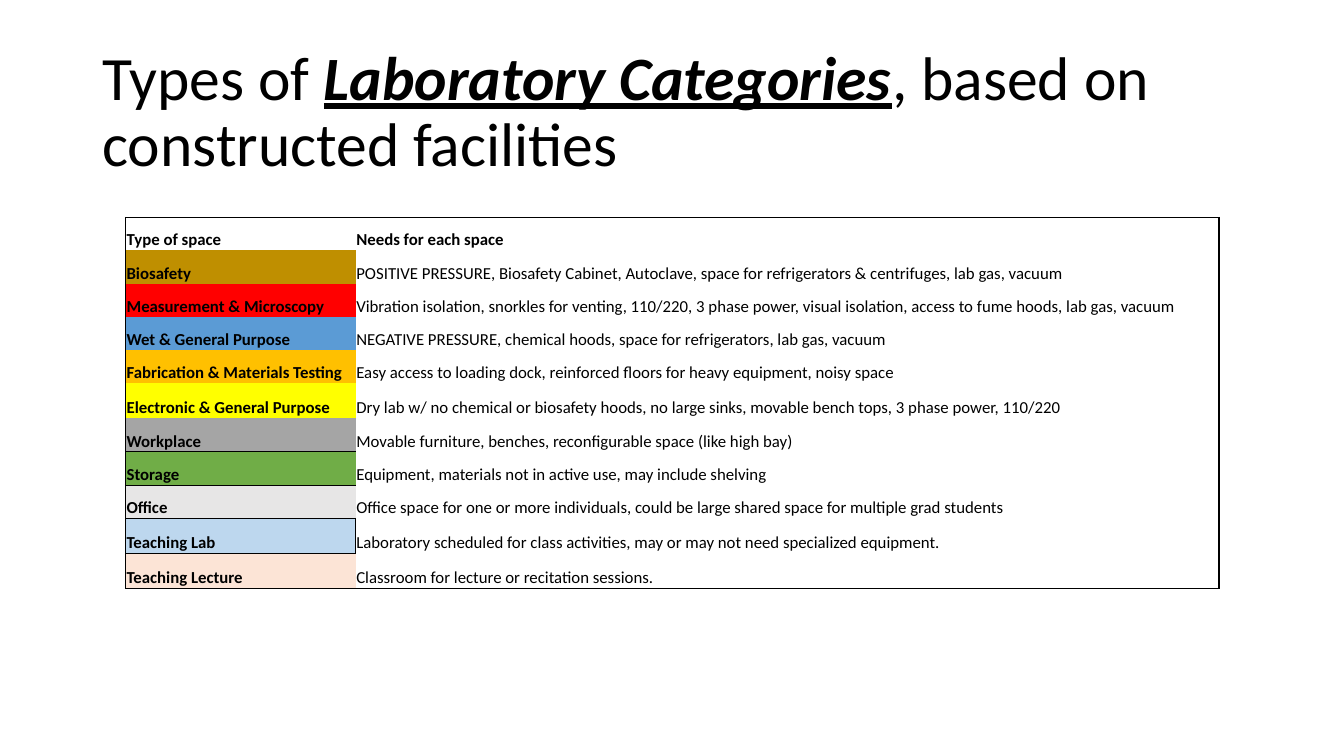
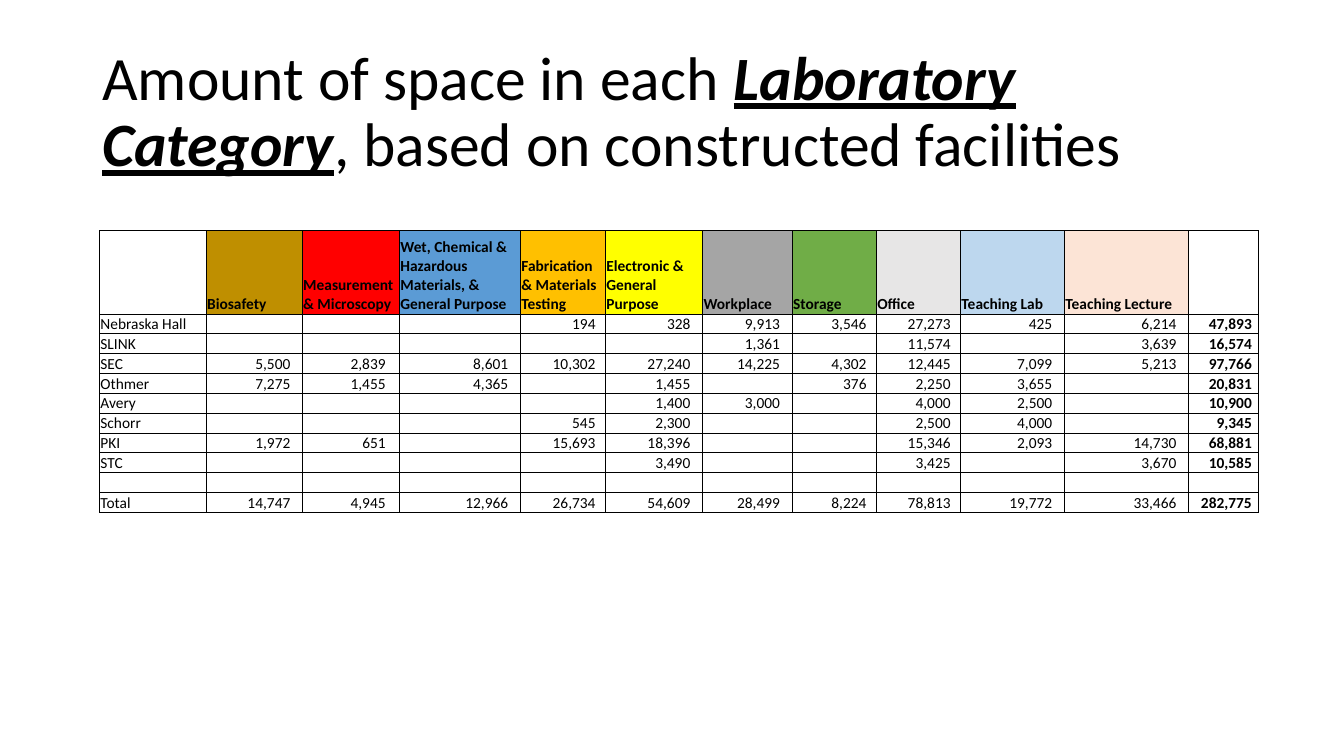
from dataclasses import dataclass
from typing import Optional

from lxml import etree
from pptx import Presentation
from pptx.dml.color import RGBColor
from pptx.enum.text import MSO_ANCHOR, PP_ALIGN
from pptx.oxml.ns import qn
from pptx.util import Cm, Pt

ANCHOR_MIDDLE = MSO_ANCHOR.MIDDLE
ANCHOR_BOTTOM = MSO_ANCHOR.BOTTOM
ALIGN_LEFT = PP_ALIGN.LEFT
ALIGN_RIGHT = PP_ALIGN.RIGHT
BLANK_LAYOUT = 6
FONT = "Calibri"
CELL_MARGIN = 0.02
THICK, THIN = 1, 0.5
NEEDS_WIDTHS = [5.79, 7.37, 0.15, 3.71, 0.13, 4.37, 2.82, 3.2]
COLORS = {
    "text": "000000",
    "biosafety": "BF8F00",
    "measurement": "FF0000",
    "wet": "5B9BD5",
    "fabrication": "FFC000",
    "electronic": "FFFF00",
    "workplace": "A5A5A5",
    "storage": "70AD47",
    "office": "E7E6E6",
    "teaching_lab": "BDD7EE",
    "teaching_lecture": "FCE4D6",
}


@dataclass(frozen=True)
class Category:
    name: str
    color: str
    needs: str
    needs_span: int
    column_width: float
    number_margin: float
    row_height: float = 0.84
    line_below: float = 0
    line_right: float = 0
    long_name: str = ""


@dataclass(frozen=True)
class Building:
    name: str
    areas: tuple[int, ...]


@dataclass(frozen=True)
class CellStyle:
    size: float
    bold: bool = False
    fill: Optional[str] = None
    align: PP_ALIGN = ALIGN_LEFT
    right_margin: float = CELL_MARGIN
    left: float = 0
    right: float = 0
    top: float = 0
    bottom: float = 0


CATEGORIES = (
    Category("Biosafety", "biosafety",
             "POSITIVE PRESSURE, Biosafety Cabinet, Autoclave, space for refrigerators & centrifuges, lab gas, vacuum",
             7, 2.42, 0.3),
    Category("Measurement & Microscopy", "measurement",
             "Vibration isolation, snorkles for venting, 110/220, 3 phase power, visual isolation, "
             "access to fume hoods, lab gas, vacuum",
             7, 2.45, 0.35),
    Category("Wet & General Purpose", "wet",
             "NEGATIVE PRESSURE, chemical hoods, space for refrigerators, lab gas, vacuum",
             5, 3.05, 0.31, long_name="Wet, Chemical & Hazardous Materials, & General Purpose"),
    Category("Fabrication & Materials Testing", "fabrication",
             "Easy access to loading dock, reinforced floors for heavy equipment, noisy space",
             5, 2.14, 0.25, row_height=0.83),
    Category("Electronic & General Purpose", "electronic",
             "Dry lab w/ no chemical or biosafety hoods, no large sinks, movable bench tops, 3 phase power, 110/220",
             7, 2.45, 0.31, row_height=0.88),
    Category("Workplace", "workplace",
             "Movable furniture, benches, reconfigurable space (like high bay)",
             4, 2.26, 0.31, line_below=THIN),
    Category("Storage", "storage",
             "Equipment, materials not in active use, may include shelving",
             4, 2.12, 0.25, line_below=THIN),
    Category("Office", "office",
             "Office space for one or more individuals, could be large shared space for multiple grad students",
             6, 2.12, 0.25, line_below=THIN),
    Category("Teaching Lab", "teaching_lab",
             "Laboratory scheduled for class activities, may or may not need specialized equipment.",
             5, 2.62, 0.31, row_height=0.88, line_below=THIN, line_right=THIN),
    Category("Teaching Lecture", "teaching_lecture",
             "Classroom for lecture or recitation sessions.",
             3, 3.13, 0.31, row_height=0.88),
)

BUILDINGS = (
    Building("Nebraska Hall", (0, 0, 0, 194, 328, 9913, 3546, 27273, 425, 6214)),
    Building("SLINK", (0, 0, 0, 0, 0, 1361, 0, 11574, 0, 3639)),
    Building("SEC", (5500, 2839, 8601, 10302, 27240, 14225, 4302, 12445, 7099, 5213)),
    Building("Othmer", (7275, 1455, 4365, 0, 1455, 0, 376, 2250, 3655, 0)),
    Building("Avery", (0, 0, 0, 0, 1400, 3000, 0, 4000, 2500, 0)),
    Building("Schorr", (0, 0, 0, 545, 2300, 0, 0, 2500, 4000, 0)),
    Building("PKI", (1972, 651, 0, 15693, 18396, 0, 0, 15346, 2093, 14730)),
    Building("STC", (0, 0, 0, 0, 3490, 0, 0, 3425, 0, 3670)),
)


def color(name: str) -> RGBColor:
    return RGBColor.from_string(COLORS[name])


def style_font(font, size: float) -> None:
    font.name = FONT
    font.size = Pt(size)
    font.color.rgb = color("text")


def add_title(slide, before: str, emphasis: str, after: str) -> None:
    shape = slide.shapes.add_textbox(Cm(2.33), Cm(1.02), Cm(29.21), Cm(3.68))
    frame = shape.text_frame
    frame.word_wrap = True
    frame.vertical_anchor = ANCHOR_MIDDLE
    paragraph = frame.paragraphs[0]
    paragraph.line_spacing = 0.9
    style_font(paragraph.font, 44)
    for text in (before, emphasis, after):
        run = paragraph.add_run()
        run.text = text
        if text == emphasis:
            run.font.bold = run.font.italic = run.font.underline = True


def add_plain_table(slide, left: float, top: float, widths: list[float], heights: list[float]):
    frame = slide.shapes.add_table(len(heights), len(widths), Cm(left), Cm(top),
                                   Cm(sum(widths)), Cm(sum(heights)))
    table = frame.table
    table.first_row = table.horz_banding = False
    for column, width in zip(table.columns, widths):
        column.width = Cm(width)
    for row, height in zip(table.rows, heights):
        row.height = Cm(height)
    return table


def add_border(properties, tag: str, weight: float) -> None:
    line = etree.SubElement(properties, qn(tag), w=str(int(Pt(weight))))
    if weight:
        fill = etree.SubElement(line, qn("a:solidFill"))
        etree.SubElement(fill, qn("a:srgbClr"), val=COLORS["text"])
    else:
        etree.SubElement(line, qn("a:noFill"))


def fill_cell(cell, text: str, style: CellStyle) -> None:
    properties = cell._tc.get_or_add_tcPr()
    for tag, weight in (("a:lnL", style.left), ("a:lnR", style.right),
                        ("a:lnT", style.top), ("a:lnB", style.bottom)):
        add_border(properties, tag, weight)
    if style.fill:
        cell.fill.solid()
        cell.fill.fore_color.rgb = color(style.fill)
    else:
        cell.fill.background()
    cell.vertical_anchor = ANCHOR_BOTTOM
    cell.margin_left = cell.margin_top = Cm(CELL_MARGIN)
    cell.margin_right = Cm(style.right_margin)
    cell.margin_bottom = 0
    paragraph = cell.text_frame.paragraphs[0]
    paragraph.alignment = style.align
    style_font(paragraph.font, style.size)
    paragraph.font.bold = style.bold
    if text:
        paragraph.add_run().text = text
    else:
        etree.SubElement(paragraph._p, qn("a:endParaRPr"), sz=str(int(style.size * 100)))


def fill_needs(table, row: int, text: str, start: int, span: int, bold: bool = False,
               left: float = 0, top: float = 0, bottom: float = 0) -> None:
    last = len(NEEDS_WIDTHS) - 1
    merged_end = start + span - 1
    table.cell(row, start).merge(table.cell(row, merged_end))
    for column in range(1, last + 1):
        reaches_edge = column == last or (column == start and merged_end == last)
        style = CellStyle(12, bold, left=left if column == 1 else 0,
                          right=THICK if reaches_edge else 0, top=top, bottom=bottom)
        fill_cell(table.cell(row, column), text if column == 1 else "", style)


def add_needs_table(slide) -> None:
    heights = [0.83] + [category.row_height for category in CATEGORIES]
    table = add_plain_table(slide, 3.17, 5.48, NEEDS_WIDTHS, heights)
    fill_cell(table.cell(0, 0), "Type of space", CellStyle(12, True, left=THICK, top=THICK))
    fill_needs(table, 0, "Needs for each space", 3, 2, bold=True, top=THICK)
    line_above = 0
    for row, category in enumerate(CATEGORIES, start=1):
        edge = THICK if row == len(CATEGORIES) else 0
        name_style = CellStyle(12, True, category.color, left=THICK, right=category.line_right,
                               top=line_above, bottom=edge or category.line_below)
        fill_cell(table.cell(row, 0), category.name, name_style)
        fill_needs(table, row, category.needs, 1, category.needs_span,
                   left=category.line_right, bottom=edge)
        line_above = category.line_below


def grid_style(bold: bool = False, fill: Optional[str] = None, align: PP_ALIGN = ALIGN_LEFT,
               right_margin: float = CELL_MARGIN) -> CellStyle:
    return CellStyle(11, bold, fill, align, right_margin, THIN, THIN, THIN, THIN)


def add_space_table(slide) -> None:
    totals = tuple(sum(areas) for areas in zip(*(building.areas for building in BUILDINGS)))
    rows = BUILDINGS + (Building("", (0,) * len(CATEGORIES)), Building("Total", totals))
    widths = [2.69] + [category.column_width for category in CATEGORIES] + [1.76]
    table = add_plain_table(slide, 2.51, 5.81, widths, [2.1] + [0.5] * len(rows))
    last = len(widths) - 1
    for column in (0, last):
        fill_cell(table.cell(0, column), "", grid_style())
    for column, category in enumerate(CATEGORIES, start=1):
        fill_cell(table.cell(0, column), category.long_name or category.name,
                  grid_style(True, category.color))
    margins = [category.number_margin for category in CATEGORIES] + [0.17]
    for row, building in enumerate(rows, start=1):
        fill_cell(table.cell(row, 0), building.name, grid_style())
        values = building.areas + (sum(building.areas),)
        for column, (value, margin) in enumerate(zip(values, margins), start=1):
            style = grid_style(column == last, align=ALIGN_RIGHT, right_margin=margin)
            fill_cell(table.cell(row, column), f"{value:,}" if value else "", style)


def main() -> None:
    """Build the two laboratory space slides."""
    presentation = Presentation()
    presentation.slide_width = Cm(33.87)
    presentation.slide_height = Cm(19.05)
    layout = presentation.slide_layouts[BLANK_LAYOUT]

    types_slide = presentation.slides.add_slide(layout)
    add_title(types_slide, "Types of ", "Laboratory Categories", ", based on constructed facilities")
    add_needs_table(types_slide)

    space_slide = presentation.slides.add_slide(layout)
    add_title(space_slide, "Amount of space in each ", "Laboratory Category",
              ", based on constructed facilities")
    add_space_table(space_slide)

    presentation.save("out.pptx")


if __name__ == "__main__":
    main()
